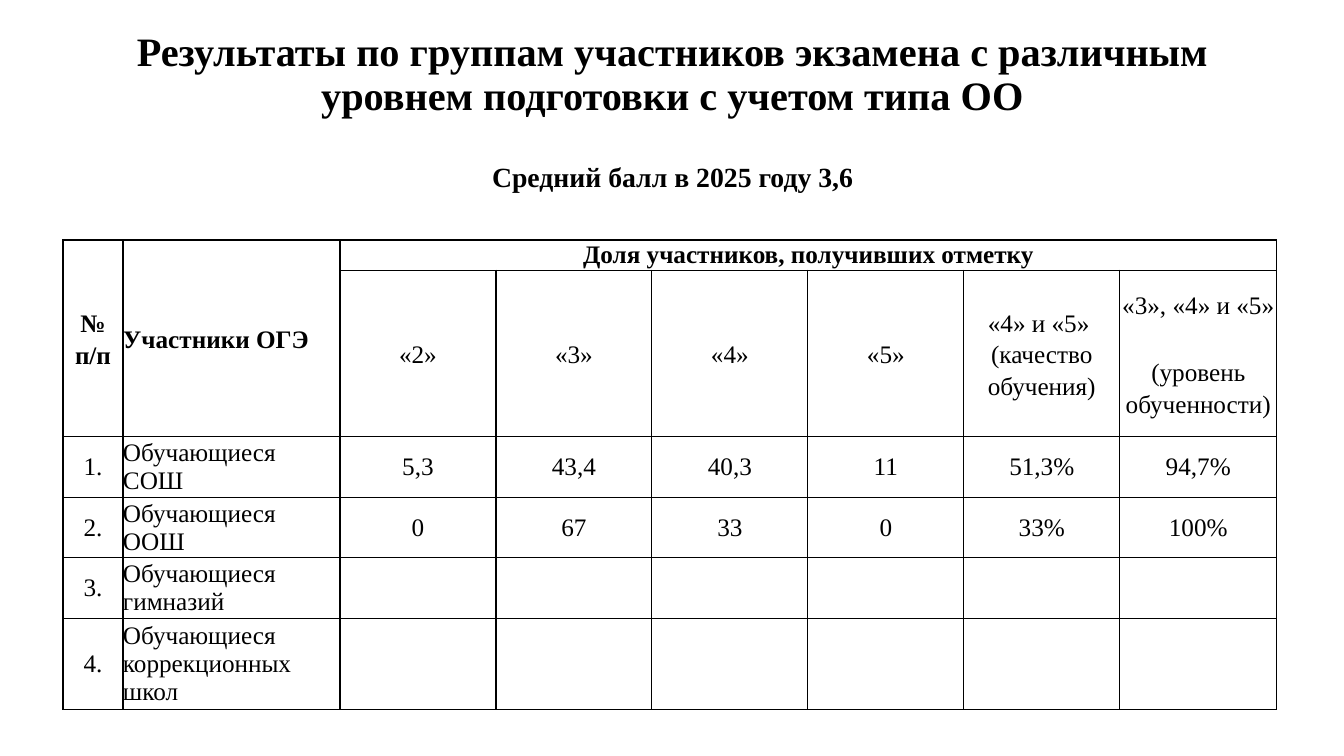
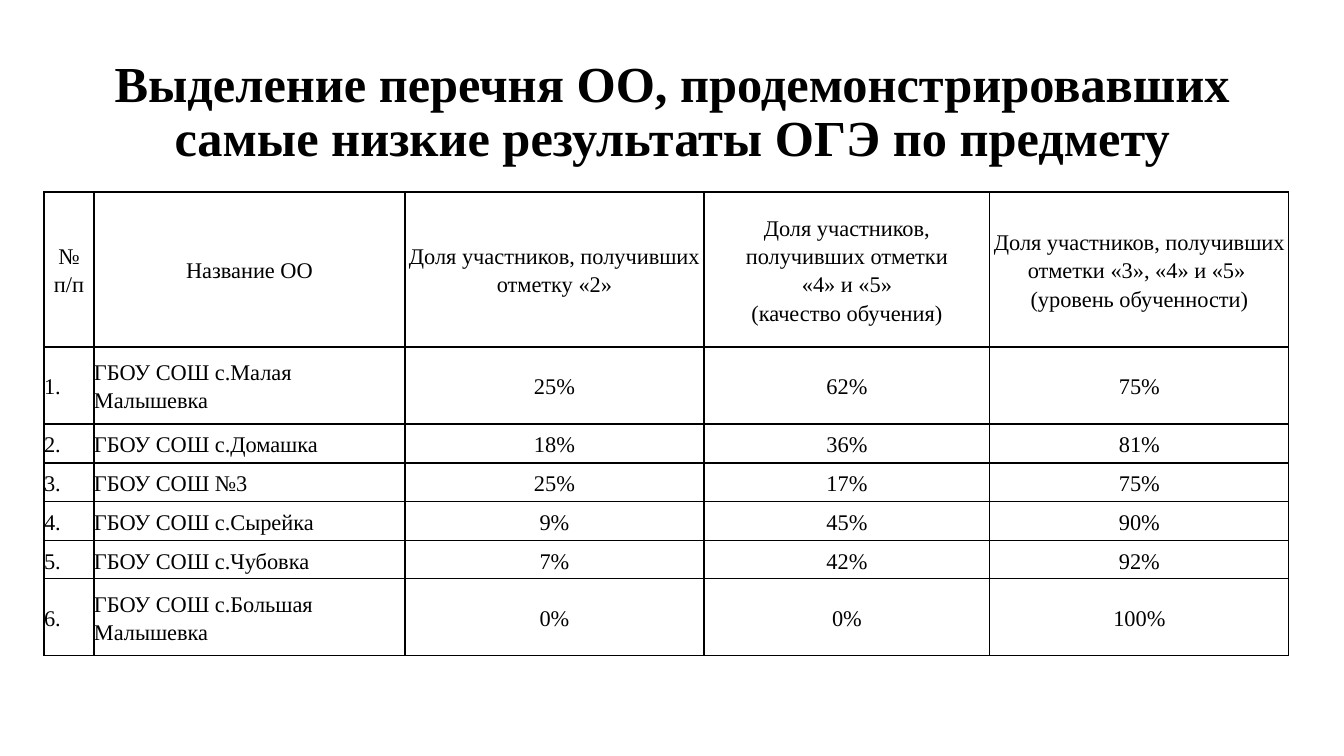
import pptx
import pptx.dml.color
import pptx.enum.text
import pptx.oxml
import pptx.oxml.ns
import pptx.util

FONT = "Times New Roman"
BLACK = pptx.dml.color.RGBColor(0, 0, 0)
LEFT = pptx.enum.text.PP_ALIGN.LEFT
CENTER = pptx.enum.text.PP_ALIGN.CENTER
MIDDLE = pptx.enum.text.MSO_ANCHOR.MIDDLE
PX = 914400 / 100.8
BORDER = (
    '<a:{side} {ns} w="12700"><a:solidFill><a:srgbClr val="{color}"/>'
    "</a:solidFill></a:{side}>"
)


def px(length):
    return pptx.util.Emu(round(length * PX))


def write(frame, text, size=18, bold=False, align=CENTER, spacing=1.0, before=0, append=False):
    """Each newline starts a paragraph, each vertical tab a line."""
    for number, line in enumerate(text.split("\n")):
        fresh = append or number > 0
        paragraph = frame.add_paragraph() if fresh else frame.paragraphs[0]
        paragraph.text = line
        paragraph.alignment = align
        paragraph.line_spacing = spacing
        paragraph.space_before = pptx.util.Pt(before)
        for run in paragraph.runs:
            run.font.name = FONT
            run.font.size = pptx.util.Pt(size)
            run.font.bold = bold
            run.font.color.rgb = BLACK


deck = pptx.Presentation()
deck.slide_width, deck.slide_height = px(1344), px(756)

# Content of the two slides
groups = {
    "title": "Результаты по группам участников экзамена с различным уровнем подготовки с учетом типа ОО",
    "title_size": 28.8,
    "subtitle": "Средний балл в 2025 году 3,6",
    "corner": (63, 240),
    "columns": [60, 217, *[156] * 5, 157],
    "row_heights": [30, 166, 61, 60, 61, 91],
    "merges": [(0, 0, 1, 0), (0, 1, 1, 1), (0, 2, 0, 7)],
    "size": 18,
    "header_rows": 2,
    "bold_rows": 1,
    "body_spacing": 1.0,
    "left_cells": {(row, 1) for row in range(6)},
    "tight_cells": {(0, 2)},
    "rows": [
        ["№ п/п", "Участники ОГЭ", "Доля участников, получивших отметку"],
        ["", "", "«2»", "«3»", "«4»", "«5»",
         "«4» и «5» \v(качество обучения)", "«3», «4» и «5» \v(уровень обученности)"],
        ["1.", "Обучающиеся СОШ", "5,3", "43,4", "40,3", "11", "51,3%", "94,7%"],
        ["2.", "Обучающиеся ООШ", "0", "67", "33", "0", "33%", "100%"],
        ["3.", "Обучающиеся гимназий"],
        ["4.", "Обучающиеся коррекционных школ"],
    ],
}
schools = {
    "title": "Выделение перечня ОО, продемонстрировавших самые низкие результаты ОГЭ по предмету",
    "title_size": 36,
    "subtitle": "",
    "corner": (44, 192),
    "columns": [50, 311, 299, 286, 299],
    "row_heights": [155, 77, 39, 39, 39, 38, 77],
    "merges": [],
    "size": 16,
    "header_rows": 1,
    "bold_rows": 0,
    "body_spacing": 1.14,
    "left_cells": {(row, column) for row in range(1, 7) for column in (0, 1)},
    "tight_cells": set(),
    "rows": [
        ["№ п/п", "Название ОО", "Доля участников, получивших отметку «2»",
         "Доля участников, получивших отметки\v «4» и «5» \n(качество обучения)",
         "Доля участников, получивших отметки «3», «4» и «5» \v(уровень обученности)"],
        ["1.", "ГБОУ СОШ с.Малая Малышевка", "25%", "62%", "75%"],
        ["2.", "ГБОУ СОШ с.Домашка", "18%", "36%", "81%"],
        ["3.", "ГБОУ СОШ №3", "25%", "17%", "75%"],
        ["4.", "ГБОУ СОШ с.Сырейка", "9%", "45%", "90%"],
        ["5.", "ГБОУ СОШ с.Чубовка", "7%", "42%", "92%"],
        ["6.", "ГБОУ СОШ с.Большая Малышевка", "0%", "0%", "100%"],
    ],
}

for content in (groups, schools):
    slide = deck.slides.add_slide(deck.slide_layouts[6])

    # Title, with the average mark below it
    heading = slide.shapes.add_textbox(px(93), px(40), px(1159), px(146)).text_frame
    heading.word_wrap = True
    heading.vertical_anchor = MIDDLE
    write(heading, content["title"], size=content["title_size"], bold=True, spacing=0.9)
    if content["subtitle"]:
        write(heading, content["subtitle"], size=19.8, bold=True, spacing=0.9,
              before=32, append=True)

    # Results table
    columns, row_heights = content["columns"], content["row_heights"]
    left, top = content["corner"]
    results = slide.shapes.add_table(
        len(row_heights), len(columns),
        px(left), px(top), px(sum(columns)), px(sum(row_heights)),
    ).table
    results.first_row = results.horz_banding = False
    for column, width in zip(results.columns, columns):
        column.width = px(width)
    for row, height in zip(results.rows, row_heights):
        row.height = px(height)

    # Plain cells with thin borders
    for cell in results.iter_cells():
        cell.margin_left = cell.margin_right = cell.margin_top = cell.margin_bottom = 0
        cell.vertical_anchor = MIDDLE
        cell.fill.background()
        properties = cell._tc.get_or_add_tcPr()
        for place, side in enumerate(("lnL", "lnR", "lnT", "lnB")):
            line = BORDER.format(side=side, ns=pptx.oxml.ns.nsdecls("a"), color=BLACK)
            properties.insert(place, pptx.oxml.parse_xml(line))
    for first_row, first_column, last_row, last_column in content["merges"]:
        results.cell(first_row, first_column).merge(results.cell(last_row, last_column))

    # Cell text
    for r, texts in enumerate(content["rows"]):
        for c, text in enumerate(texts):
            if not text:
                continue
            loose = r < content["header_rows"] and (r, c) not in content["tight_cells"]
            write(
                results.cell(r, c).text_frame, text,
                size=content["size"],
                bold=r < content["bold_rows"],
                align=LEFT if (r, c) in content["left_cells"] else CENTER,
                spacing=1.14 if loose else content["body_spacing"],
            )

deck.save("out.pptx")
